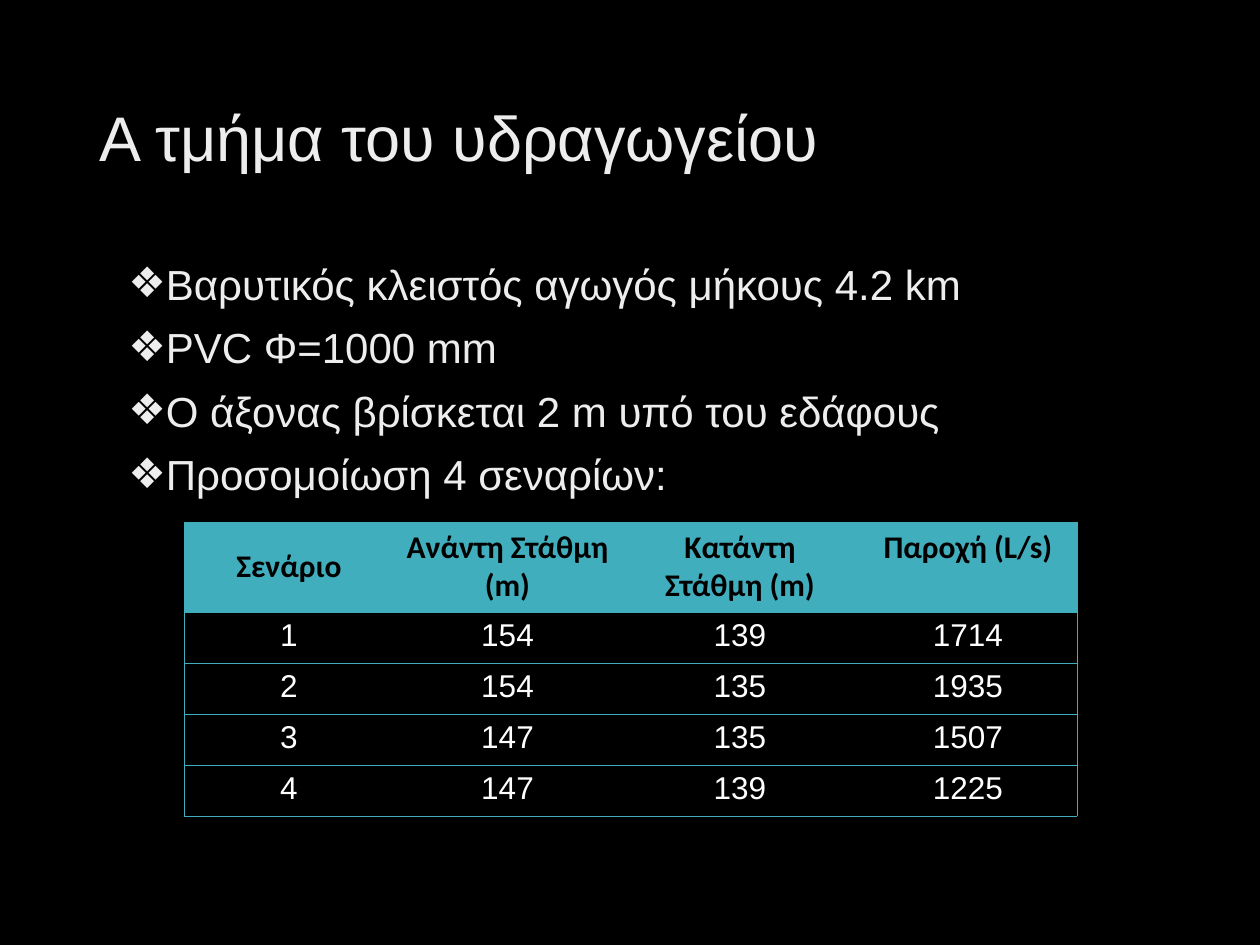
from lxml import etree
from pptx import Presentation
from pptx.dml.color import RGBColor
from pptx.enum.text import MSO_ANCHOR, PP_ALIGN
from pptx.oxml.ns import qn
from pptx.util import Pt

# Content
TITLE = "Α τμήμα του υδραγωγείου"
BULLETS = [
    "Βαρυτικός κλειστός αγωγός μήκους 4.2 km",
    "PVC Φ=1000 mm",
    "Ο άξονας βρίσκεται 2 m υπό του εδάφους",
    "Προσομοίωση 4 σεναρίων:",
]
SCENARIOS = [
    ("Σενάριο", "Ανάντη Στάθμη (m)", "Κατάντη Στάθμη (m)", "Παροχή (L/s)"),
    ("1", "154", "139", "1714"),
    ("2", "154", "135", "1935"),
    ("3", "147", "135", "1507"),
    ("4", "147", "139", "1225"),
]

# Layout in px, 126 to the inch
EMU_PER_PX = 914400 / 126
SLIDE_SIZE = (1260, 945)
TITLE_BOX = (87, 50, 1086, 183)
BODY_BOX = (116, 252, 1057, 600)
TABLE_CORNER = (184, 522)
COLUMN_WIDTHS = [210, 227, 238, 218]
HEADER_HEIGHT, ROW_HEIGHT = 90, 51
BULLET_INDENT = 24

COLORS = {"background": "000000", "text": "EDEDED", "accent": "41AEBD",
          "header": "000000", "cell": "FFFFFF"}
CENTER, LEFT = PP_ALIGN.CENTER, PP_ALIGN.LEFT
MIDDLE, TOP = MSO_ANCHOR.MIDDLE, MSO_ANCHOR.TOP


def px(value):
    return round(value * EMU_PER_PX)


def rgb(name):
    return RGBColor.from_string(COLORS[name])


def write(frame, lines, size, color, font="Arial", bold=False, align=LEFT,
          line_spacing=None, gap=0, bullet=None):
    for index, line in enumerate(lines):
        paragraph = frame.add_paragraph() if index else frame.paragraphs[0]
        paragraph.alignment = align
        if line_spacing:
            paragraph.line_spacing = line_spacing
        if index and gap:
            paragraph.space_before = Pt(gap)
        if bullet:
            properties = paragraph._p.get_or_add_pPr()
            properties.set("marL", str(px(BULLET_INDENT)))
            properties.set("indent", str(-px(BULLET_INDENT)))
            etree.SubElement(properties, qn("a:buFont"), typeface=font)
            etree.SubElement(properties, qn("a:buChar"), char=bullet)
        run = paragraph.add_run()
        run.text = line
        run.font.size = Pt(size)
        run.font.name = font
        run.font.bold = bold
        run.font.color.rgb = rgb(color)


def add_text_box(slide, box, lines, anchor=TOP, **text_format):
    frame = slide.shapes.add_textbox(*map(px, box)).text_frame
    frame.word_wrap = True
    frame.vertical_anchor = anchor
    write(frame, lines, color="text", **text_format)


def set_borders(cell, visible):
    properties = cell._tc.get_or_add_tcPr()
    for side in ("L", "R", "T", "B"):
        line = etree.SubElement(properties, qn(f"a:ln{side}"), w=str(Pt(0.5)))
        if side in visible:
            fill = etree.SubElement(line, qn("a:solidFill"))
            etree.SubElement(fill, qn("a:srgbClr"), val=COLORS["accent"])
        else:
            etree.SubElement(line, qn("a:noFill"))


def add_scenario_table(slide):
    row_heights = [HEADER_HEIGHT] + [ROW_HEIGHT] * (len(SCENARIOS) - 1)
    table = slide.shapes.add_table(
        len(SCENARIOS), len(COLUMN_WIDTHS), *map(px, TABLE_CORNER),
        px(sum(COLUMN_WIDTHS)), px(sum(row_heights))).table
    table.first_row = table.horz_banding = False
    for column, width in zip(table.columns, COLUMN_WIDTHS):
        column.width = px(width)
    last_column = len(COLUMN_WIDTHS) - 1
    for r, (values, height) in enumerate(zip(SCENARIOS, row_heights)):
        table.rows[r].height = px(height)
        for c, value in enumerate(values):
            cell = table.cell(r, c)
            # Horizontal rules everywhere, vertical ones on the outside only
            set_borders(cell, "TB" + "L" * (c == 0) + "R" * (c == last_column))
            if r == 0:
                cell.fill.solid()
                cell.fill.fore_color.rgb = rgb("accent")
                cell.vertical_anchor = MIDDLE if c == 0 else TOP
                write(cell.text_frame, [value], 18, "header", font="Calibri",
                      bold=True, align=CENTER)
            else:
                cell.fill.background()
                write(cell.text_frame, [value], 18, "cell", align=CENTER)


def main():
    presentation = Presentation()
    presentation.slide_width, presentation.slide_height = map(px, SLIDE_SIZE)
    slide = presentation.slides.add_slide(presentation.slide_layouts[6])
    slide.background.fill.solid()
    slide.background.fill.fore_color.rgb = rgb("background")

    # Title, bullet list and scenario table
    add_text_box(slide, TITLE_BOX, [TITLE], anchor=MIDDLE, size=36,
                 line_spacing=0.9)
    add_text_box(slide, BODY_BOX, BULLETS, size=24, gap=7.5, bullet="❖")
    add_scenario_table(slide)
    presentation.save("out.pptx")


if __name__ == "__main__":
    main()
